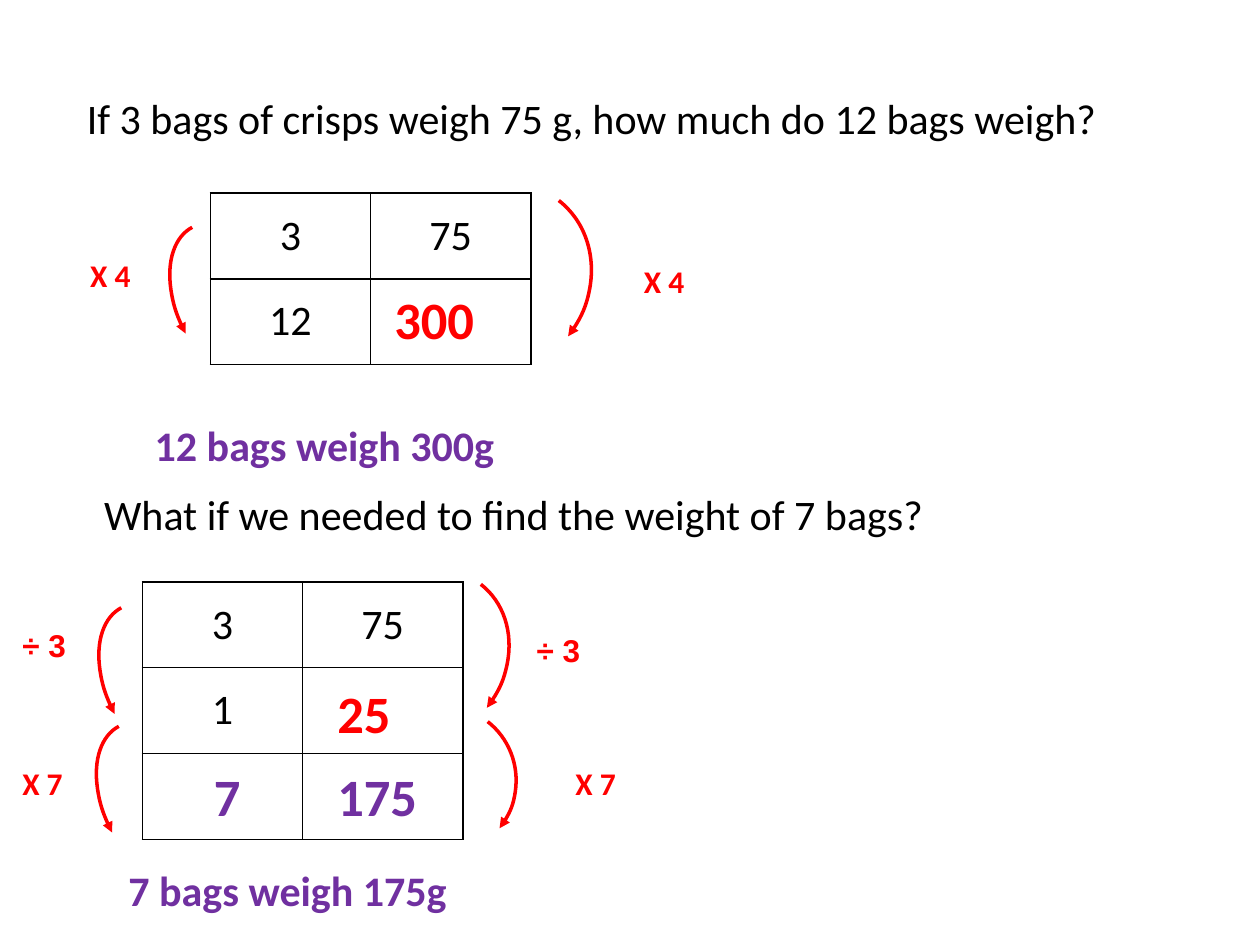
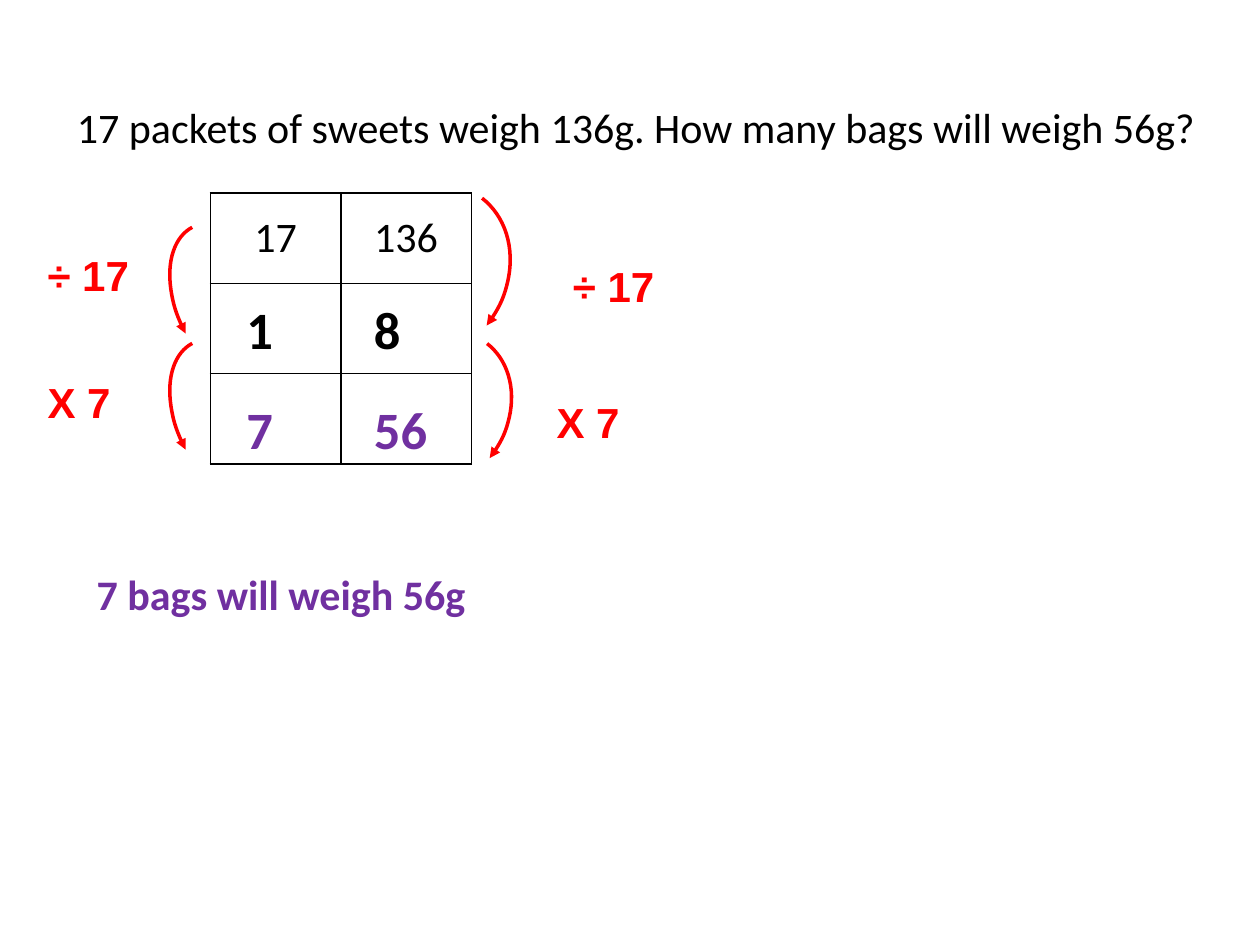
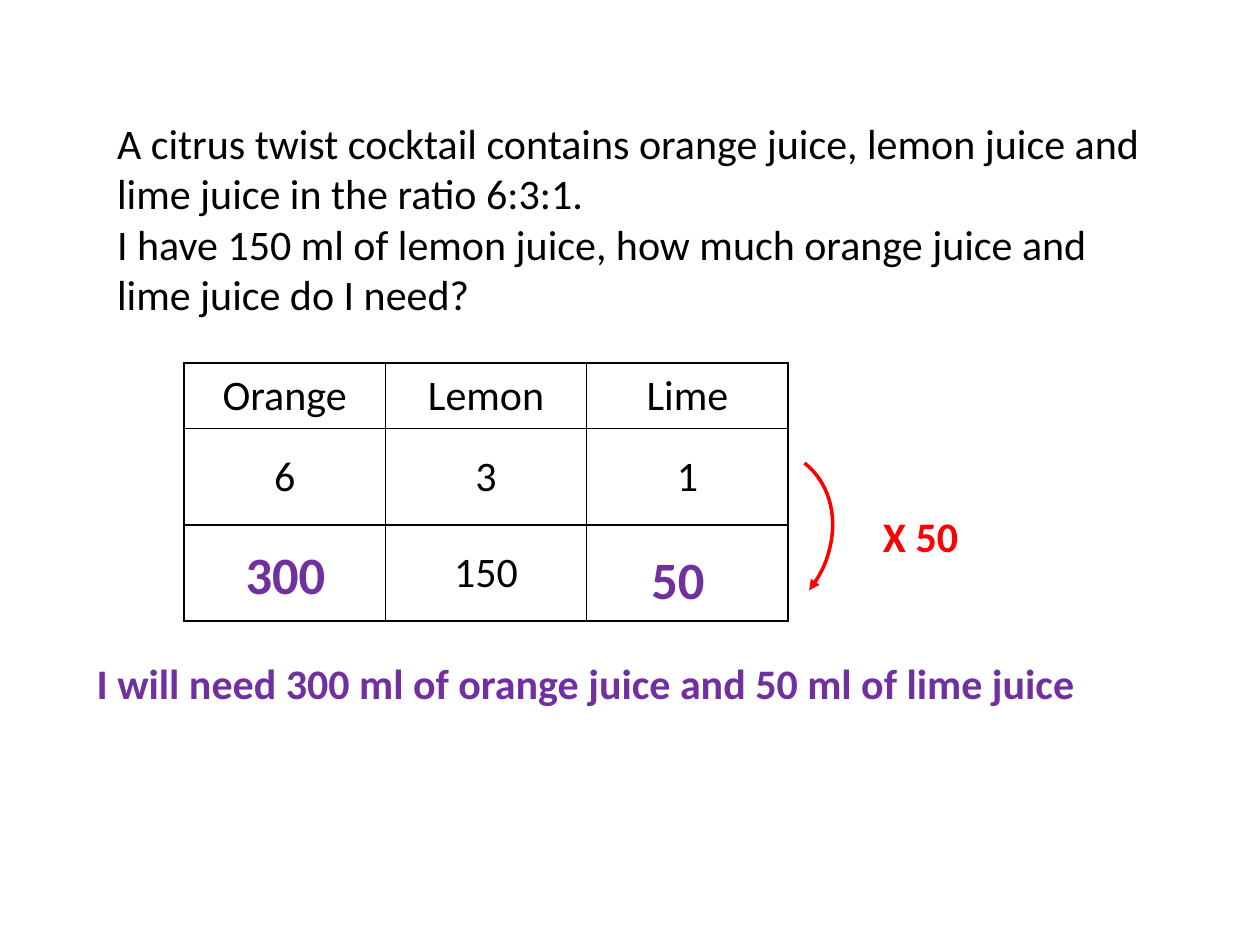
from lxml import etree
from pptx import Presentation
from pptx import util as u
from pptx.dml.color import RGBColor
from pptx.enum import shapes, text
from pptx.oxml import ns

BLACK = RGBColor(0x00, 0x00, 0x00)
RED = RGBColor(0xFF, 0x00, 0x00)
PURPLE = RGBColor(0x70, 0x30, 0xA0)

QUESTION = {"size": u.Pt(24), "name": "Calibri", "bold": False}
CONCLUSION = {"size": u.Pt(24), "name": "Calibri", "bold": True}
ANSWER = {"size": u.Pt(30), "name": "Calibri", "bold": True}
STEP = {"size": u.Pt(18), "name": "Calibri", "bold": True}
STEP_ARIAL = {**STEP, "name": "Arial"}
BIG_STEP_ARIAL = {**STEP_ARIAL, "size": u.Pt(24)}

LEFT_ARC_SIZE = (2.24, 3.66)
LEFT_TURN = {"rotation": 152.1, "flips": ("flipV",)}
RIGHT_TURN = {"rotation": 217.9, "flips": ("flipH", "flipV")}


def add_xml(parent, tag, **attributes):
    return etree.SubElement(parent, ns.qn(tag), attributes)


def format_run(run, style, color):
    for key, value in style.items():
        setattr(run.font, key, value)
    run.font.color.rgb = color


def add_words(slide, words, left, top, width, style, color=BLACK, lines=1):
    height = u.Cm(0.25) + int(style["size"] * 1.22 * lines)
    frame = slide.shapes.add_textbox(u.Cm(left), u.Cm(top), u.Cm(width), height).text_frame
    frame.word_wrap = True
    frame.auto_size = text.MSO_AUTO_SIZE.SHAPE_TO_FIT_TEXT
    frame.text = words
    for paragraph in frame.paragraphs:
        format_run(paragraph.runs[0], style, color)


def add_border(cell):
    properties = cell._tc.get_or_add_tcPr()
    for position, side in enumerate(("a:lnL", "a:lnR", "a:lnT", "a:lnB")):
        edge = etree.Element(ns.qn(side), w=str(u.Pt(1)))
        add_xml(add_xml(edge, "a:solidFill"), "a:srgbClr", val=str(BLACK))
        properties.insert(position, edge)


def add_ratio_table(slide, rows, left, top, column_width, row_heights):
    columns = len(rows[0])
    table = slide.shapes.add_table(
        len(rows), columns, u.Cm(left), u.Cm(top),
        u.Cm(column_width * columns), u.Cm(sum(row_heights))).table
    table.first_row = table.horz_banding = False
    for column in table.columns:
        column.width = u.Cm(column_width)
    for row, height, values in zip(table.rows, row_heights, rows):
        row.height = u.Cm(height)
        for cell, value in zip(row.cells, values):
            cell.fill.background()
            add_border(cell)
            cell.vertical_anchor = text.MSO_ANCHOR.MIDDLE
            paragraph = cell.text_frame.paragraphs[0]
            paragraph.alignment = text.PP_ALIGN.CENTER
            if value:
                run = paragraph.add_run()
                run.text = value
                format_run(run, QUESTION, BLACK)


def add_arc(slide, left, top, width, height, turn):
    arc = slide.shapes.add_shape(
        shapes.MSO_SHAPE.ARC, u.Cm(left), u.Cm(top), u.Cm(width), u.Cm(height))
    arc.shadow.inherit = False
    arc.fill.background()
    arc.line.color.rgb = RED
    arc.line.width = u.Pt(2)
    arc.rotation = turn["rotation"]
    for flip in turn["flips"]:
        arc._element.spPr.xfrm.set(flip, "1")
    add_xml(arc.line._get_or_add_ln(), "a:tailEnd", type="triangle")


def add_left_arcs(slide, *places):
    for left, top in places:
        add_arc(slide, left, top, *LEFT_ARC_SIZE, LEFT_TURN)


def add_right_arcs(slide, *boxes):
    for box in boxes:
        add_arc(slide, *box, RIGHT_TURN)


def add_steps(slide, words, width, style, *places):
    for left, top in places:
        add_words(slide, words, left, top, width, style, RED)


def build_crisps(slide):
    add_words(slide, "If 3 bags of crisps weigh 75 g, how much do 12 bags weigh?",
              1.5, 1.73, 23, QUESTION)
    add_words(slide, "What if we needed to find the weight of 7 bags?",
              1.85, 9.73, 21.8, QUESTION)
    add_ratio_table(slide, [("3", "75"), ("12", "")], 4.24, 3.89, 3.23, [1.73] * 2)
    add_ratio_table(slide, [("3", "75"), ("1", ""), ("", "")], 2.87, 11.73, 3.23, [1.73] * 3)
    add_left_arcs(slide, (3.61, 4.37), (2.18, 12.04), (2.13, 14.43))
    add_right_arcs(slide, (8.18, 3.61, 3.66, 4.09), (6.91, 11.38, 3.25, 3.78),
                   (7.37, 14.22, 3.02, 3.1))
    add_steps(slide, "X 4", 1.52, STEP, (1.57, 5.03), (12.73, 5.16))
    add_steps(slide, "÷ 3", 1.52, STEP_ARIAL, (0.2, 12.5), (10.57, 12.6))
    add_steps(slide, "X 7", 1.52, STEP, (0.2, 15.27), (11.35, 15.27))
    add_words(slide, "12 bags weigh 300g", 2.87, 8.33, 8.15, CONCLUSION, PURPLE)
    add_words(slide, "7 bags weigh 175g", 2.34, 17.3, 8.15, CONCLUSION, PURPLE)
    add_words(slide, "300", 7.7, 5.66, 2.8, ANSWER, RED)
    add_words(slide, "25", 6.55, 13.61, 2.54, ANSWER, RED)
    add_words(slide, "7", 4.06, 15.27, 1.32, ANSWER, PURPLE)
    add_words(slide, "175", 6.55, 15.27, 2.54, ANSWER, PURPLE)


def build_sweets(slide):
    add_words(slide, "17 packets of sweets weigh 136g. How many bags will weigh 56g?",
              1.3, 1.93, 23.4, QUESTION)
    add_ratio_table(slide, [("17", "136"), ("", ""), ("", "")], 4.24, 3.89, 2.63, [1.82] * 3)
    add_left_arcs(slide, (3.61, 4.37), (3.61, 6.71))
    add_right_arcs(slide, (6.86, 3.58, 3.3, 3.94), (7.26, 6.55, 2.92, 3.58))
    add_steps(slide, "÷ 17", 3.2, BIG_STEP_ARIAL, (0.71, 4.9), (11.3, 5.13))
    add_steps(slide, "X 7", 3.2, BIG_STEP_ARIAL, (0.71, 7.47), (10.97, 7.87))
    add_words(slide, "7 bags will weigh 56g", 1.7, 11.33, 15.8, CONCLUSION, PURPLE)
    for top, color, packets, grams in ((5.87, BLACK, "1", "8"), (7.87, PURPLE, "7", "56")):
        add_words(slide, packets, 4.72, top, 1.85, ANSWER, color)
        add_words(slide, grams, 7.29, top, 2.01, ANSWER, color)


def build_cocktail(slide):
    add_words(slide,
              "A citrus twist cocktail contains orange juice, lemon juice and "
              "lime juice in the ratio 6:3:1.\n"
              "I have 150 ml of lemon juice, how much orange juice and "
              "lime juice do I need?",
              2.11, 2.24, 21.56, QUESTION, lines=4)
    add_ratio_table(slide, [("Orange", "Lemon", "Lime"), ("6", "3", "1"), ("", "150", "")],
                    3.71, 7.32, 4.06, [1.32, 1.94, 1.94])
    add_right_arcs(slide, (13.36, 8.92, 3.3, 3.94))
    add_words(slide, "X 50", 17.55, 10.16, 4.6, CONCLUSION, RED)
    add_words(slide, "I will need 300 ml of orange juice and 50 ml of lime juice",
              1.7, 13.13, 20.4, CONCLUSION, PURPLE)
    add_words(slide, "300", 4.7, 10.8, 2.8, ANSWER, PURPLE)
    add_words(slide, "50", 12.88, 10.9, 2.13, ANSWER, PURPLE)


def main():
    deck = Presentation()
    deck.slide_width, deck.slide_height = u.Cm(25.4), u.Cm(19.05)
    for build in (build_crisps, build_sweets, build_cocktail):
        build(deck.slides.add_slide(deck.slide_layouts[6]))
    deck.save("out.pptx")


if __name__ == "__main__":
    main()
